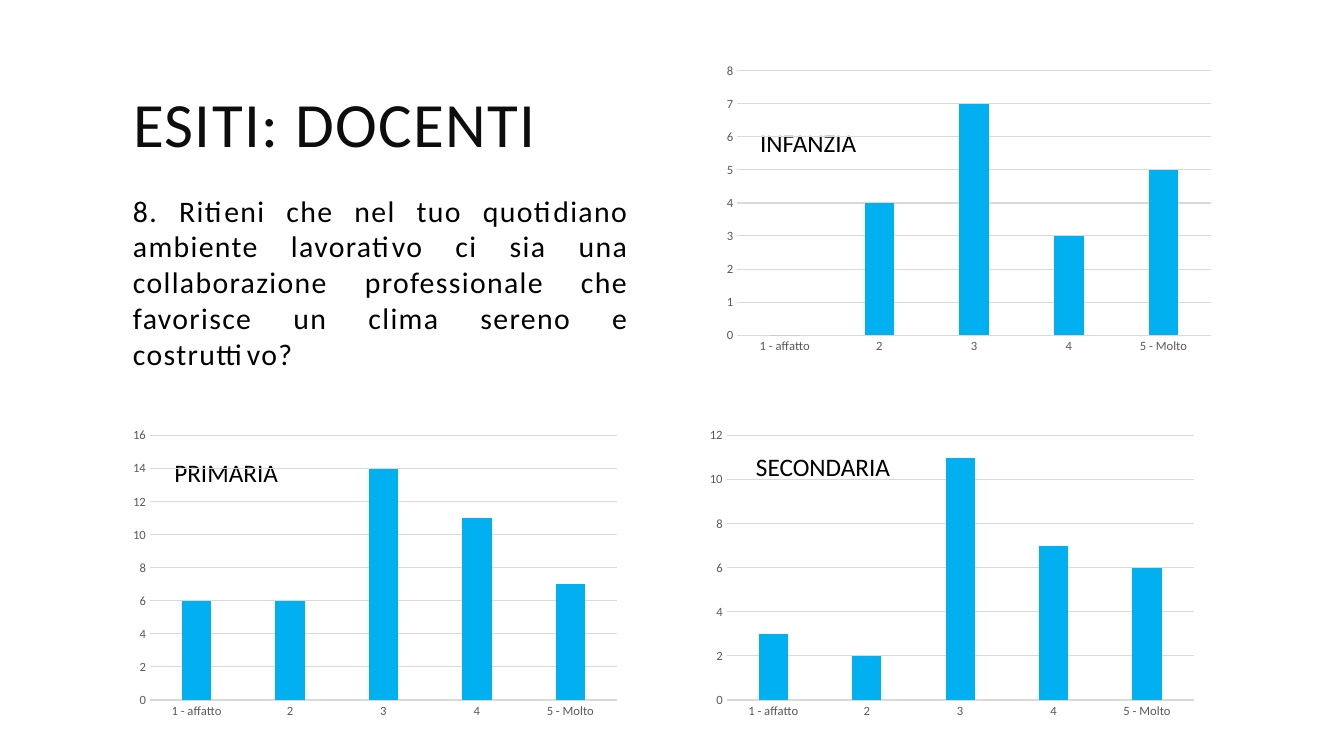
from dataclasses import dataclass

from pptx import Presentation
from pptx.chart.data import CategoryChartData
from pptx.dml.color import RGBColor
from pptx.enum.chart import XL_CHART_TYPE, XL_TICK_MARK
from pptx.enum.text import MSO_ANCHOR, MSO_AUTO_SIZE, PP_ALIGN
from pptx.util import Inches, Pt

COLUMNS = XL_CHART_TYPE.COLUMN_CLUSTERED
NO_TICK = XL_TICK_MARK.NONE
MIDDLE = MSO_ANCHOR.MIDDLE
NO_FIT, GROW = MSO_AUTO_SIZE.NONE, MSO_AUTO_SIZE.SHAPE_TO_FIT_TEXT
LEFT, JUSTIFY = PP_ALIGN.LEFT, PP_ALIGN.JUSTIFY
TITLE_ONLY = 5


@dataclass(frozen=True)
class Theme:
    font: str = "Calibri"
    title: RGBColor = RGBColor(0x0D, 0x0D, 0x0D)
    ink: RGBColor = RGBColor(0, 0, 0)
    axis: RGBColor = RGBColor(0x59, 0x59, 0x59)
    grid: RGBColor = RGBColor(0xD9, 0xD9, 0xD9)
    bar: RGBColor = RGBColor(0x00, 0xB0, 0xF0)
    title_size: float = 45
    question_size: float = 21.3
    label_size: float = 18
    chart_size: float = 10
    axis_size: float = 9
    grid_width: float = 0.75


THEME = Theme()

QUESTION = ("8. Ritieni che nel tuo quotidiano ambiente lavorativo ci sia una "
            "collaborazione professionale che favorisce un clima sereno e costruttivo?")
ANSWERS = ["1 - affatto", "2", "3", "4", "5 - Molto"]
CHART_SIZE = (5, 3)
LOWER_ROW = 4.19

# School, chart corner, label offset and width, votes, axis maximum and step
SCHOOLS = [
    ("INFANZIA", (7.11, 0.57), (0.33, 0.64, 2.04), (0, 4, 7, 3, 5), 8, 1),
    ("PRIMARIA", (1.22, LOWER_ROW), (0.41, 0.3, 1.88), (6, 6, 14, 11, 7), 16, 2),
    ("SECONDARIA", (6.94, LOWER_ROW), (0.46, 0.24, 2.04), (3, 2, 11, 7, 6), 12, 2),
]


def set_font(font, size, color):
    formats = {"name": THEME.font, "size": Pt(size), "bold": False}
    for name, value in formats.items():
        setattr(font, name, value)
    font.color.rgb = color


def write(frame, text, size, color, align=LEFT, spacing=0):
    frame.word_wrap = True
    paragraph = frame.paragraphs[0]
    paragraph.alignment = align
    run = paragraph.add_run()
    run.text = text
    set_font(run.font, size, color)
    if spacing:
        run.font._element.set("spc", str(spacing * 100))


def add_title(slide, text, box):
    title = slide.shapes.title
    for side, length in zip(("left", "top", "width", "height"), box):
        setattr(title, side, Inches(length))
    frame = title.text_frame
    frame.auto_size = NO_FIT
    frame.vertical_anchor = MIDDLE
    write(frame, text, THEME.title_size, THEME.title, spacing=1)


def add_text(slide, text, box, size, **layout):
    frame = slide.shapes.add_textbox(*map(Inches, box)).text_frame
    frame.auto_size = GROW
    write(frame, text, size, THEME.ink, **layout)


def draw_line(line):
    line.color.rgb = THEME.grid
    line.width = Pt(THEME.grid_width)


def add_votes_chart(slide, votes, box, maximum, step):
    data = CategoryChartData()
    data.categories = ANSWERS
    data.add_series("Series 1", votes)
    chart = slide.shapes.add_chart(COLUMNS, *map(Inches, box), data).chart
    chart.has_legend = False
    chart.has_title = False
    set_font(chart.font, THEME.chart_size, THEME.ink)

    # Columns
    plot = chart.plots[0]
    for name, value in {"gap_width": 219, "overlap": -27,
                        "vary_by_categories": False}.items():
        setattr(plot, name, value)
    columns = plot.series[0].format.fill
    columns.solid()
    columns.fore_color.rgb = THEME.bar

    # Axes
    for axis in (chart.category_axis, chart.value_axis):
        axis.major_tick_mark = axis.minor_tick_mark = NO_TICK
        set_font(axis.tick_labels.font, THEME.axis_size, THEME.axis)
    draw_line(chart.category_axis.format.line)
    scale = chart.value_axis
    for name, value in {"minimum_scale": 0, "maximum_scale": maximum,
                        "major_unit": step, "has_major_gridlines": True}.items():
        setattr(scale, name, value)
    scale.format.line.fill.background()
    draw_line(scale.major_gridlines.format.line)


def build_results_slide(deck):
    slide = deck.slides.add_slide(deck.slide_layouts[TITLE_ONLY])
    add_title(slide, "ESITI: DOCENTI", (1.22, 0.62, 8.48, 1.19))
    add_text(slide, QUESTION, (1.22, 1.86, 5.12, 1.89), THEME.question_size,
             align=JUSTIFY, spacing=1)

    # Labels lie behind the charts' gridlines
    for school, (left, top), (dx, dy, width), *_ in SCHOOLS:
        add_text(slide, school, (left + dx, top + dy, width, 0.4), THEME.label_size)
    for _, corner, _, votes, maximum, step in SCHOOLS:
        add_votes_chart(slide, votes, corner + CHART_SIZE, maximum, step)


def main():
    deck = Presentation()
    deck.slide_width, deck.slide_height = Inches(13.33), Inches(7.5)
    build_results_slide(deck)
    deck.save("out.pptx")


if __name__ == "__main__":
    main()
